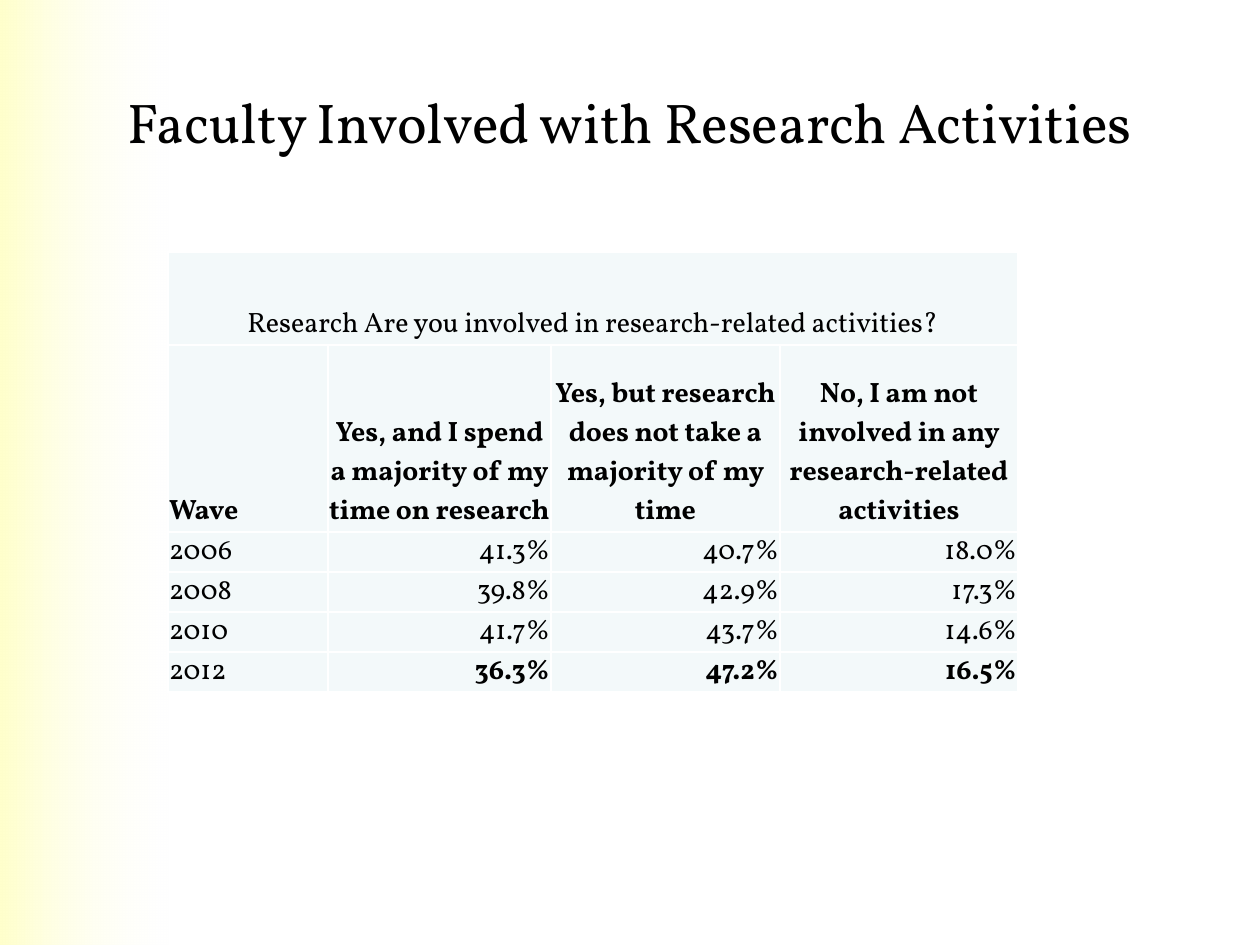
from dataclasses import dataclass

from lxml.etree import SubElement
from pptx import Presentation
from pptx.dml.color import RGBColor
from pptx.enum.shapes import MSO_SHAPE
from pptx.enum.text import MSO_ANCHOR, PP_ALIGN
from pptx.oxml.ns import qn
from pptx.util import Emu, Pt

PIXELS_PER_INCH = 126
FONT = "Vollkorn"
COLORS = {
    "text": "000000",
    "cell": "F3F9FA",
    "border": "FFFFFF",
    "band_start": "FFFFCC",
    "band_end": "FFFFF4",
}


@dataclass
class CellStyle:
    align: PP_ALIGN
    anchor: MSO_ANCHOR
    bold: bool = False


@dataclass
class TableRow:
    height: int
    values: list[str]
    styles: list[CellStyle]


def px(length: int) -> Emu:
    return Emu(round(length * 914400 / PIXELS_PER_INCH))


def color(name: str) -> RGBColor:
    return RGBColor.from_string(COLORS[name])


def write(frame, text: str, size: int, align: PP_ALIGN, bold: bool = False) -> None:
    para = frame.paragraphs[0]
    para.alignment = align
    span = para.add_run()
    span.text = text
    for name, value in {"name": FONT, "size": Pt(size), "bold": bold}.items():
        setattr(span.font, name, value)
    span.font.color.rgb = color("text")


def add_band(page) -> None:
    band = page.shapes.add_shape(MSO_SHAPE.RECTANGLE, 0, 0, px(168), px(945))
    band.shadow.inherit = False
    band.line.fill.background()
    band.fill.gradient()
    band.fill.gradient_angle = 0
    stops = band.fill.gradient_stops
    for stop, name, position in zip(stops, ("band_start", "band_end"), (0, 1)):
        stop.color.rgb = color(name)
        stop.position = position
    # The right end fades to fully transparent
    end_color = list(band.element.iter(qn("a:srgbClr")))[-1]
    SubElement(end_color, qn("a:alpha"), val="0")


def add_title(page, text: str) -> None:
    box = page.shapes.add_textbox(px(63), px(42), px(1134), px(158))
    box.text_frame.word_wrap = True
    box.text_frame.vertical_anchor = MSO_ANCHOR.MIDDLE
    write(box.text_frame, text, 32, PP_ALIGN.CENTER)


def add_borders(cell) -> None:
    properties = cell._tc.get_or_add_tcPr()
    for side in ("lnL", "lnR", "lnT", "lnB"):
        line = SubElement(properties, qn(f"a:{side}"), w=str(Pt(1)))
        fill = SubElement(line, qn("a:solidFill"))
        SubElement(fill, qn("a:srgbClr"), val=COLORS["border"])


def format_cell(cell, style: CellStyle) -> None:
    cell_format = {
        "margin_left": px(1),
        "margin_right": px(1),
        "margin_top": px(1),
        "margin_bottom": 0,
        "vertical_anchor": style.anchor,
    }
    for name, value in cell_format.items():
        setattr(cell, name, value)
    add_borders(cell)
    cell.fill.solid()
    cell.fill.fore_color.rgb = color("cell")


def add_survey_table(page, widths: list[int], rows: list[TableRow]) -> None:
    frame = page.shapes.add_table(
        len(rows), len(widths), px(168), px(252),
        px(sum(widths)), px(sum(row.height for row in rows)),
    )
    table = frame.table
    for column, width in zip(table.columns, widths):
        column.width = px(width)
    for row_index, row in enumerate(rows):
        table.rows[row_index].height = px(row.height)
        for cell, text, style in zip(table.rows[row_index].cells, row.values, row.styles):
            format_cell(cell, style)
            if text:
                write(cell.text_frame, text, 16, style.align, style.bold)
    # The question spans the whole first row
    table.cell(0, 0).merge(table.cell(0, len(widths) - 1))


def survey_rows() -> list[TableRow]:
    question = CellStyle(PP_ALIGN.CENTER, MSO_ANCHOR.BOTTOM)
    wave_heading = CellStyle(PP_ALIGN.LEFT, MSO_ANCHOR.BOTTOM, True)
    answer_heading = CellStyle(PP_ALIGN.CENTER, MSO_ANCHOR.BOTTOM, True)
    wave = CellStyle(PP_ALIGN.LEFT, MSO_ANCHOR.TOP)
    share = CellStyle(PP_ALIGN.RIGHT, MSO_ANCHOR.TOP)
    latest_share = CellStyle(PP_ALIGN.RIGHT, MSO_ANCHOR.TOP, True)

    headings = [
        "Wave",
        "Yes, and I spend a majority of my time on research",
        "Yes, but research does not take a majority of my time",
        "No, I am not involved in any research-related activities",
    ]
    results = [
        ["2006", "41.3%", "40.7%", "18.0%"],
        ["2008", "39.8%", "42.9%", "17.3%"],
        ["2010", "41.7%", "43.7%", "14.6%"],
        ["2012", "36.3%", "47.2%", "16.5%"],
    ]
    title = "Research Are you involved in research-related activities?"
    rows = [
        TableRow(93, [title, "", "", ""], [question] * 4),
        TableRow(187, headings, [wave_heading] + [answer_heading] * 3),
    ]
    for values in results:
        style = latest_share if values is results[-1] else share
        rows.append(TableRow(40, values, [wave] + [style] * 3))
    return rows


def main() -> None:
    deck = Presentation()
    deck.slide_width, deck.slide_height = px(1260), px(945)
    page = deck.slides.add_slide(deck.slide_layouts[6])

    # Background band, title, survey results
    add_band(page)
    add_title(page, "Faculty Involved with Research Activities")
    add_survey_table(page, [160, 223, 229, 238], survey_rows())

    deck.save("out.pptx")


if __name__ == "__main__":
    main()
